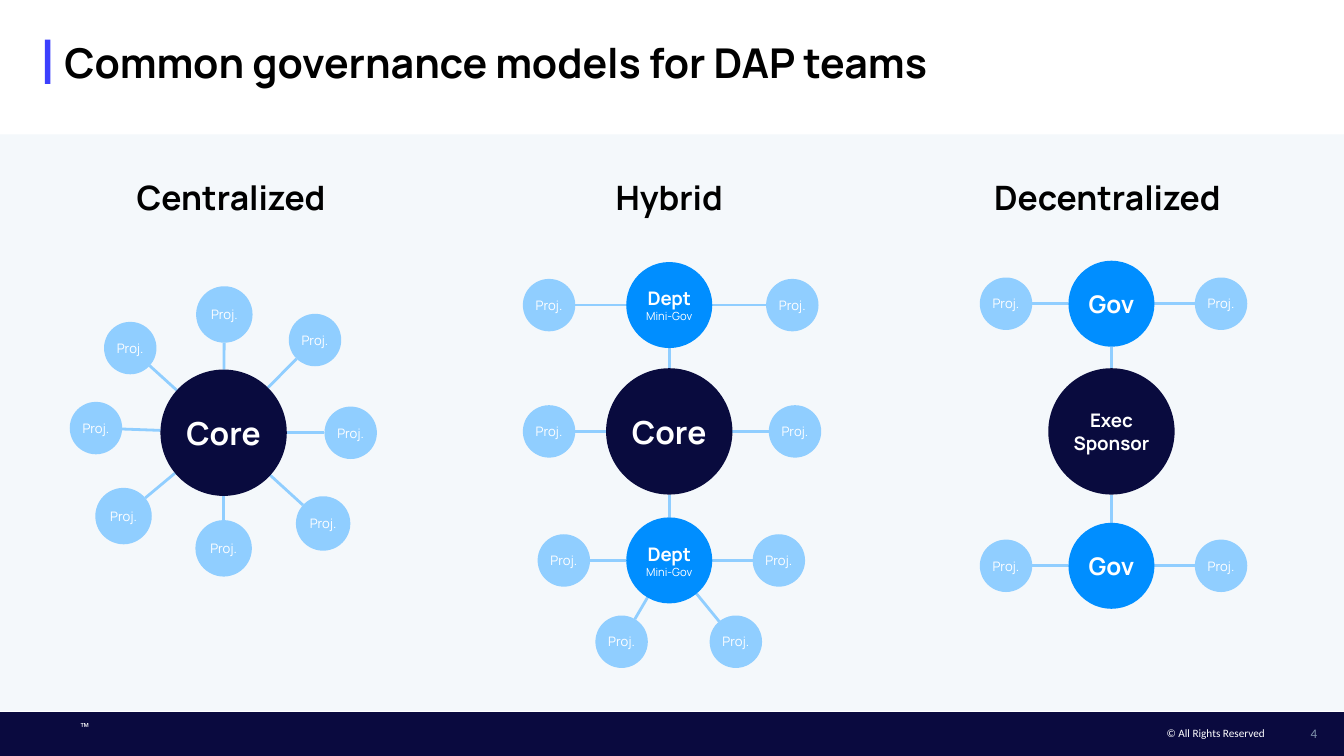
"""Build a slide of three governance models drawn as hub-and-satellite diagrams."""
import math
from dataclasses import dataclass

from lxml import etree
from pptx import Presentation
from pptx import util as u
from pptx.dml.color import RGBColor
from pptx.enum import shapes, text
from pptx.oxml.ns import qn

COLUMNS, ROWS = 100, 56.25
CELL = u.Inches(0.1)
WHITE = RGBColor(0xFF, 0xFF, 0xFF)
BLACK = RGBColor(0x00, 0x00, 0x00)
FOOTER_NAVY = RGBColor(0x0A, 0x0A, 0x3F)
NAVY = RGBColor(0x09, 0x0B, 0x3E)
BLUE = RGBColor(0x00, 0x8E, 0xFF)
SKY = RGBColor(0x90, 0xCE, 0xFF)
PANEL = RGBColor(0xF4, 0xF8, 0xFB)
ACCENT = RGBColor(0x3C, 0x40, 0xFD)
GREY = RGBColor(0x82, 0x96, 0xB0)
CENTER, LEFT, RIGHT = text.PP_ALIGN.CENTER, text.PP_ALIGN.LEFT, text.PP_ALIGN.RIGHT
NARROW_INSETS = (0.4, 0.2, 0.4, 0.2)
FOOTER_INSETS = (0.7, 0.4, 0.7, 0.4)


@dataclass(frozen=True)
class Label:
    content: str
    size: float
    bold: bool = True


@dataclass(frozen=True)
class Circle:
    x: float
    y: float
    diameter: float
    color: RGBColor
    labels: tuple[Label, ...]


@dataclass(frozen=True)
class Hub:
    circle: Circle
    satellites: tuple[tuple[float, ...], ...]


@dataclass(frozen=True)
class Model:
    heading: str
    hubs: tuple[Hub, ...]


def cells(count: float) -> int:
    """Convert grid cells to a length."""
    return round(count * CELL)


def core(x: float, y: float, content: str = "Core", size: float = 17) -> Circle:
    """Describe a large central circle."""
    return Circle(x, y, 9.4, NAVY, (Label(content, size),))


def unit(x: float, y: float, *labels: Label) -> Circle:
    """Describe a mid-sized circle for a department or governance unit."""
    return Circle(x, y, 6.4, BLUE, labels)


DEPT = (Label("Dept", 10), Label("Mini-Gov", 6, False))
GOV = (Label("Gov", 13),)
PROJECT = (Label("Proj.", 7, False),)
SMALL, MEDIUM = 3.9, 4.2
SIDES = ((-7.85, 0, SMALL), (8.15, 0, SMALL))
RING = (
    (6.8, -6.9, SMALL), (9.45, 0, SMALL), (7.4, 6.75, 4.05), (0, 8.6, MEDIUM),
    (-7.45, 6.2, MEDIUM), (-9.5, -0.35, SMALL), (-6.95, -6.3, SMALL), (0.05, -8.8, MEDIUM),
)
MODELS = (
    Model("Centralized", (Hub(core(16.64, 32.2), RING),)),
    Model("Hybrid", (
        Hub(unit(49.8, 22.7, *DEPT), ((-8.95, 0, SMALL), (9.15, 0, SMALL))),
        Hub(core(49.8, 32.1), ((-8.95, 0, SMALL), (9.35, 0, SMALL))),
        Hub(unit(49.8, 41.7, *DEPT), (*SIDES, (-3.55, 6.05, SMALL), (4.95, 6.05, SMALL))),
    )),
    Model("Decentralized", (
        Hub(unit(82.7, 22.6, *GOV), SIDES),
        Hub(core(82.7, 32.1, "Exec Sponsor", 10), ()),
        Hub(unit(82.7, 42.1, *GOV), SIDES),
    )),
)


def write(frame, *labels: Label, font="Manrope", color=WHITE, align=CENTER,
          insets=NARROW_INSETS, anchor=text.MSO_ANCHOR.MIDDLE, wrap=True) -> None:
    """Write one paragraph per label into a text frame."""
    frame.word_wrap = wrap
    frame.vertical_anchor = anchor
    frame.margin_left, frame.margin_top, frame.margin_right, frame.margin_bottom = map(cells, insets)
    for index, label in enumerate(labels):
        paragraph = frame.add_paragraph() if index else frame.paragraphs[0]
        paragraph.alignment = align
        run = paragraph.add_run()
        run.text = label.content
        run.font.name, run.font.size, run.font.bold = font, u.Pt(label.size), label.bold
        run.font.color.rgb = color


def add_text(slide, left: float, top: float, width: float, height: float, label: Label, **style) -> None:
    """Add a text box placed on the grid."""
    box = slide.shapes.add_textbox(*map(cells, (left, top, width, height)))
    write(box.text_frame, label, **style)


def add_filled(slide, kind, left: float, top: float, width: float, height: float, color: RGBColor):
    """Add a borderless filled shape placed on the grid."""
    shape = slide.shapes.add_shape(kind, *map(cells, (left, top, width, height)))
    shape.shadow.inherit = False
    shape.fill.solid()
    shape.fill.fore_color.rgb = color
    shape.line.fill.background()
    return shape


def add_circle(slide, circle: Circle) -> None:
    """Add a labelled circle around its centre."""
    radius = circle.diameter / 2
    shape = add_filled(slide, shapes.MSO_SHAPE.OVAL, circle.x - radius, circle.y - radius,
                       circle.diameter, circle.diameter, circle.color)
    write(shape.text_frame, *circle.labels, wrap=circle.color == NAVY)


def add_link(slide, start: Circle, end: Circle) -> None:
    """Connect the facing edges of two circles."""
    angle = math.atan2(end.y - start.y, end.x - start.x)
    across, down = math.cos(angle) / 2, math.sin(angle) / 2
    points = (start.x + across * start.diameter, start.y + down * start.diameter,
              end.x - across * end.diameter, end.y - down * end.diameter)
    link = slide.shapes.add_connector(shapes.MSO_CONNECTOR.STRAIGHT, *map(cells, points))
    link.line.color.rgb = SKY
    link.line.width = u.Pt(1.5)
    etree.SubElement(link._element.spPr, qn("a:effectLst"))


def add_model(slide, model: Model, center: float) -> None:
    """Draw a heading with its hubs, satellites and links."""
    add_text(slide, center - 13, 12.2, 26, 5, Label(model.heading, 18), color=BLACK,
             insets=(1, 1, 1, 1), anchor=text.MSO_ANCHOR.TOP)
    for upper, lower in zip(model.hubs, model.hubs[1:]):
        add_link(slide, upper.circle, lower.circle)
    for hub in model.hubs:
        for across, down, diameter in hub.satellites:
            project = Circle(hub.circle.x + across, hub.circle.y + down, diameter, SKY, PROJECT)
            add_link(slide, hub.circle, project)
            add_circle(slide, project)
        add_circle(slide, hub.circle)


def main() -> None:
    """Create and save the presentation."""
    presentation = Presentation()
    presentation.slide_width, presentation.slide_height = cells(COLUMNS), cells(ROWS)
    slide = presentation.slides.add_slide(presentation.slide_layouts[6])
    rectangle = shapes.MSO_SHAPE.RECTANGLE
    add_filled(slide, rectangle, 0, 53, COLUMNS, ROWS - 53, FOOTER_NAVY)
    add_filled(slide, rectangle, 0, 10, COLUMNS, 42.9, PANEL)
    add_filled(slide, rectangle, 3.35, 2.95, 0.4, 3.3, ACCENT)
    add_text(slide, 3.8, 2.7, 77.1, 3.8, Label("Common governance models for DAP teams", 22),
             color=BLACK, align=LEFT, insets=(1, 0, 0, 0))
    add_text(slide, 94.8, 53.5, 3.9, 2.1, Label("4", 7, False), font="Calibri", color=GREY,
             align=RIGHT, insets=FOOTER_INSETS)
    add_text(slide, 5.3, 53.4, 1.7, 1.4, Label("™", 6, False), font="Open Sans",
             insets=FOOTER_INSETS, wrap=False)
    add_text(slide, 86.1, 53.5, 10.8, 2.1, Label("© All Rights Reserved", 6, False), font="Calibri",
             align=LEFT, insets=FOOTER_INSETS)
    for index, model in enumerate(MODELS):
        add_model(slide, model, 17.2 + 32.6 * index)
    presentation.save("out.pptx")


if __name__ == "__main__":
    main()
